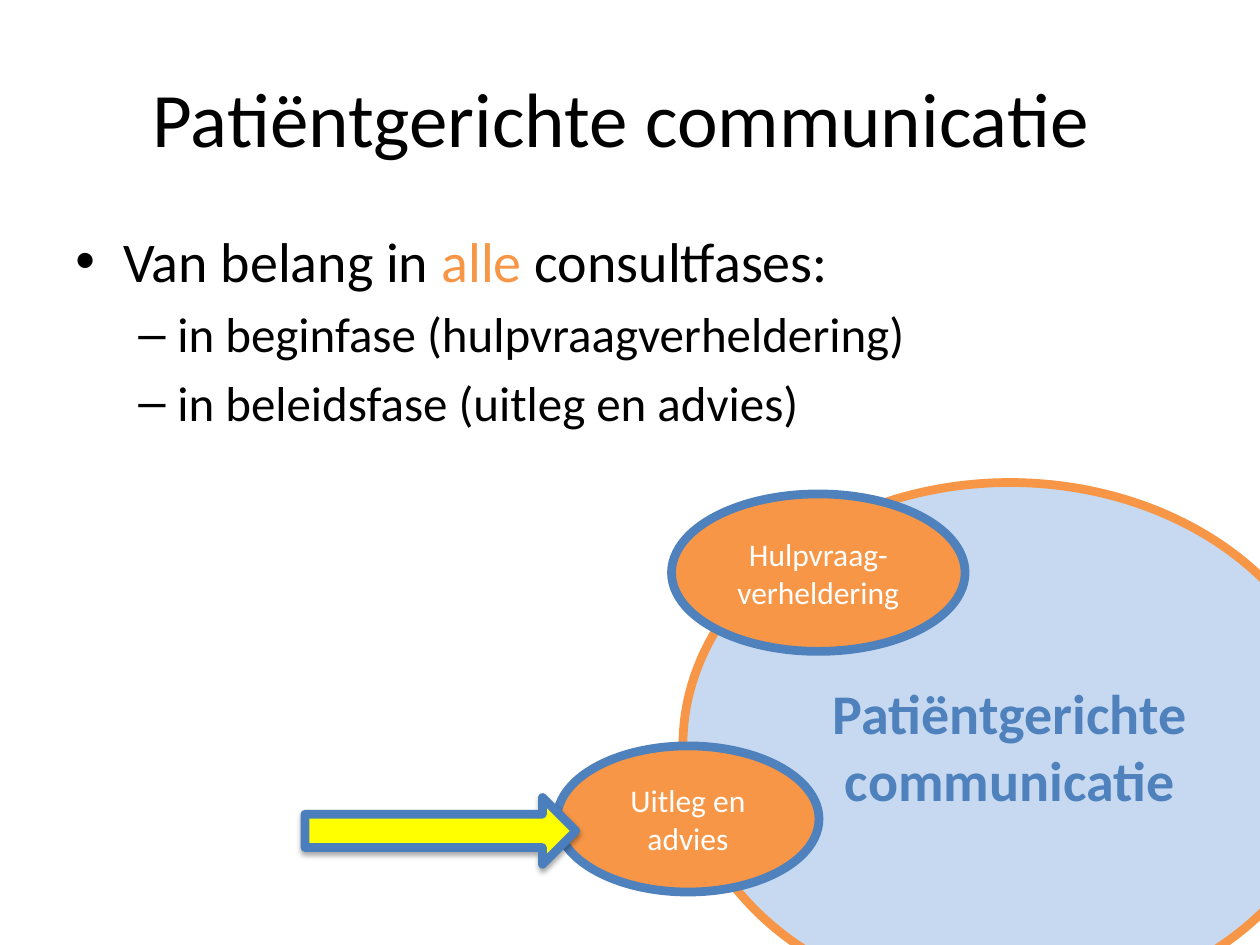
from dataclasses import dataclass

from lxml.etree import SubElement
from pptx import Presentation
from pptx.dml.color import RGBColor
from pptx.enum.shapes import MSO_SHAPE as Shape
from pptx.enum.text import MSO_ANCHOR as Anchor, PP_ALIGN as Align
from pptx.oxml.ns import qn
from pptx.util import Inches, Pt


@dataclass(frozen=True)
class Theme:
    font: str = "Calibri"
    black: str = "000000"
    white: str = "FFFFFF"
    blue: str = "4F81BD"
    pale_blue: str = "C6D9F1"
    orange: str = "F79646"
    yellow: str = "FFFF00"
    arrow_line: str = "4B7EBC"
    title: int = 44
    body: int = 32
    sub: int = 28
    label: int = 18
    line: int = 5


@dataclass(frozen=True)
class Figure:
    kind: Shape
    box: tuple[float, float, float, float]
    fill: str
    line: str
    text: str = ""
    size: int = 18
    color: str = "FFFFFF"
    bold: bool = False


@dataclass(frozen=True)
class Bullet:
    runs: tuple[tuple[str, str], ...]
    size: int
    mark: str
    left: float
    hanging: float
    level: int = 0


T = Theme()

# Back to front
FIGURES = [
    Figure(Shape.OVAL, (5.42, 3.83, 5.19, 4.17), T.pale_blue, T.orange,
           "Patiëntgerichte communicatie", T.body, T.blue, True),
    Figure(Shape.OVAL, (4.42, 5.92, 2.08, 1.16), T.orange, T.blue,
           "Uitleg en advies", T.label, T.white),
    Figure(Shape.OVAL, (5.33, 3.92, 2.33, 1.25), T.orange, T.blue,
           "Hulpvraag-verheldering", T.label, T.white),
]
ARROW = Figure(Shape.RIGHT_ARROW, (2.42, 6.33, 2.15, 0.53), T.yellow, T.arrow_line)


def phase(text: str) -> Bullet:
    return Bullet(((text, T.black),), T.sub, "–", 0.81, 0.31, 1)


BULLETS = [
    Bullet((("Van belang in ", T.black), ("alle", T.orange),
            (" consultfases:", T.black)), T.body, "•", 0.38, 0.38),
    phase("in beginfase (hulpvraagverheldering)"),
    phase("in beleidsfase (uitleg en advies)"),
]


def style_run(r, size: int, color: str, bold: bool = False) -> None:
    r.font.name = T.font
    r.font.size = Pt(size)
    r.font.bold = bold
    r.font.color.rgb = RGBColor.from_string(color)


def set_text(tf, text: str, size: int, color: str, bold: bool = False) -> None:
    tf.text = text
    tf.word_wrap = True
    tf.vertical_anchor = Anchor.MIDDLE
    p = tf.paragraphs[0]
    p.alignment = Align.CENTER
    style_run(p.runs[0], size, color, bold)


def add_figure(s, fig: Figure):
    sp = s.shapes.add_shape(fig.kind, *map(Inches, fig.box))
    sp.shadow.inherit = False
    sp.fill.solid()
    sp.fill.fore_color.rgb = RGBColor.from_string(fig.fill)
    sp.line.color.rgb = RGBColor.from_string(fig.line)
    sp.line.width = Pt(T.line)
    if fig.text:
        set_text(sp.text_frame, fig.text, fig.size, fig.color, fig.bold)
    return sp


def add_shadow(sp) -> None:
    effects = sp._element.spPr.find(qn("a:effectLst"))
    shadow = SubElement(effects, qn("a:outerShdw"), blurRad=str(Pt(3.1)),
                        dist=str(Pt(1.8)), dir="5400000", rotWithShape="0")
    color = SubElement(shadow, qn("a:srgbClr"), val=T.black)
    SubElement(color, qn("a:alpha"), val="35000")


def add_bullet(p, bullet: Bullet) -> None:
    p.level = bullet.level
    p.space_before = Pt(bullet.size * 0.2)
    pPr = p._p.get_or_add_pPr()
    pPr.set("marL", str(Inches(bullet.left)))
    pPr.set("indent", str(-Inches(bullet.hanging)))
    SubElement(pPr, qn("a:buFont"), typeface="Arial")
    SubElement(pPr, qn("a:buChar"), char=bullet.mark)
    for text, color in bullet.runs:
        r = p.add_run()
        r.text = text
        style_run(r, bullet.size, color)


def main() -> None:
    prs = Presentation()
    prs.slide_width, prs.slide_height = Inches(10), Inches(7.5)
    s = prs.slides.add_slide(prs.slide_layouts[6])

    # Title
    title = s.shapes.add_textbox(Inches(0.5), Inches(0.3), Inches(9), Inches(1.25))
    set_text(title.text_frame, "Patiëntgerichte communicatie ", T.title, T.black)

    # Ellipses and pointing arrow
    for fig in FIGURES:
        add_figure(s, fig)
    add_shadow(add_figure(s, ARROW))

    # Bullet list
    body = s.shapes.add_textbox(Inches(0.5), Inches(1.75), Inches(9), Inches(4.95))
    tf = body.text_frame
    tf.word_wrap = True
    for i, bullet in enumerate(BULLETS):
        add_bullet(tf.add_paragraph() if i else tf.paragraphs[0], bullet)

    prs.save("out.pptx")


if __name__ == "__main__":
    main()
